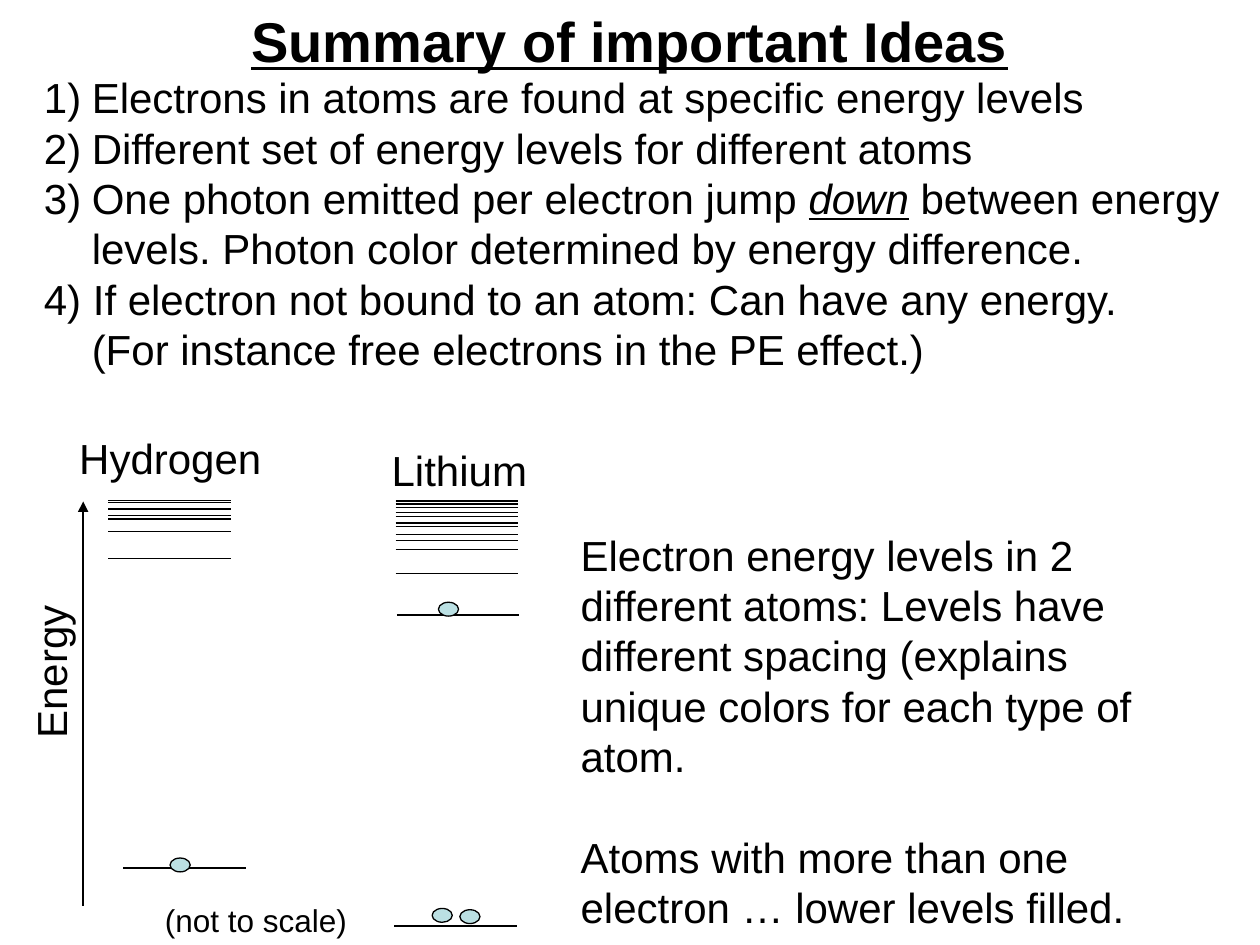
from dataclasses import dataclass

from lxml import etree
from pptx import Presentation
from pptx import util as u
from pptx.dml.color import RGBColor
from pptx.enum import shapes, text
from pptx.oxml import ns

Inches = u.Inches


@dataclass(frozen=True)
class Theme:
    font: str = "Arial"
    ink: RGBColor = RGBColor(0x00, 0x00, 0x00)
    electron: RGBColor = RGBColor(0xBB, 0xE0, 0xE3)
    title: int = 32
    body: int = 24
    note: int = 18
    line: float = 0.75


THEME = Theme()
LEVEL_WIDTH = 0.97

HYDROGEN_LEVELS = [(0.98, 6.89)] + [
    (0.86, y) for y in (4.43, 4.22, 4.12, 4.09, 4.04, 3.99, 3.97)
]
LITHIUM_LEVELS = [(3.13, 7.35), (3.15, 4.88)] + [
    (3.14, y)
    for y in (4.55, 4.36, 4.29, 4.24, 4.18, 4.15, 4.10, 4.07, 4.03, 4.00, 3.98, 3.97)
]
ELECTRONS = [(1.35, 6.81), (3.43, 7.21), (3.65, 7.22), (3.48, 4.78)]

IDEAS = [
    "Electrons in atoms are found at specific energy levels",
    "Different set of energy levels for different atoms",
    [
        ("One photon emitted per electron jump ", False),
        ("down", True),
        (" between energy levels. Photon color determined by energy difference.", False),
    ],
    "4) If electron not bound to an atom: Can have any energy.",
    "(For instance free electrons in the PE effect.)",
]
EXPLANATION = [
    "Electron energy levels in 2 different atoms: Levels have different spacing "
    "(explains unique colors for each type of atom.",
    "Atoms with more than one electron … lower levels filled.",
]


def add_text(s, box, paragraphs, size=THEME.body, heading=False, wrap=True, rotation=0, gap=0):
    sp = s.shapes.add_textbox(*map(Inches, box))
    sp.rotation = rotation
    tf = sp.text_frame
    tf.word_wrap = wrap
    tf.auto_size = text.MSO_AUTO_SIZE.SHAPE_TO_FIT_TEXT
    for i, runs in enumerate(paragraphs):
        p = tf.add_paragraph() if i else tf.paragraphs[0]
        if heading:
            p.alignment = text.PP_ALIGN.CENTER
        if i and gap:
            p.space_before = u.Pt(gap)
        for words, stressed in [(runs, False)] if isinstance(runs, str) else runs:
            r = p.add_run()
            r.text = words
            r.font.name = THEME.font
            r.font.size = u.Pt(size)
            r.font.color.rgb = THEME.ink
            r.font.bold = heading
            r.font.italic = stressed
            r.font.underline = heading or stressed
    return sp


def indent(p, first, numbered=False):
    pPr = p._p.get_or_add_pPr()
    pPr.set("marL", str(Inches(0.38)))
    pPr.set("indent", str(Inches(first)))
    if numbered:
        etree.SubElement(pPr, ns.qn("a:buFont"), typeface=THEME.font)
        etree.SubElement(pPr, ns.qn("a:buAutoNum"), type="arabicParenR")


def add_ideas(s):
    sp = add_text(s, (0.25, 0.52, 9.75, 2.52), IDEAS)
    *numbered, fourth, aside = sp.text_frame.paragraphs
    for p in numbered:
        indent(p, -0.38, numbered=True)
    indent(fourth, -0.38)
    indent(aside, 0)


def add_line(s, x1, y1, x2, y2, arrow=False):
    line = s.shapes.add_connector(
        shapes.MSO_CONNECTOR.STRAIGHT, *map(Inches, (x1, y1, x2, y2))
    )
    line.line.color.rgb = THEME.ink
    line.line.width = u.Pt(THEME.line)
    if arrow:
        etree.SubElement(line.line._get_or_add_ln(), ns.qn("a:tailEnd"), type="triangle")
    etree.SubElement(line._element.spPr, ns.qn("a:effectLst"))


def add_electron(s, x, y):
    sp = s.shapes.add_shape(
        shapes.MSO_SHAPE.OVAL, *map(Inches, (x, y, 0.16, 0.11))
    )
    sp.shadow.inherit = False
    sp.fill.solid()
    sp.fill.fore_color.rgb = THEME.electron
    sp.line.color.rgb = THEME.ink
    sp.line.width = u.Pt(THEME.line)


def main():
    prs = Presentation()
    prs.slide_width, prs.slide_height = Inches(10), Inches(7.5)
    s = prs.slides.add_slide(prs.slide_layouts[6])

    add_text(s, (0, 0, 10, 0.63), ["Summary of important Ideas"], THEME.title, heading=True)
    for x, y in HYDROGEN_LEVELS + LITHIUM_LEVELS:
        add_line(s, x, y, x + LEVEL_WIDTH, y)
    for x, y in ELECTRONS:
        add_electron(s, x, y)
    add_line(s, 0.66, 7.19, 0.66, 3.98, arrow=True)

    add_text(s, (0.53, 3.38, 1.65, 0.5), ["Hydrogen"], wrap=False)
    add_text(s, (3.01, 3.48, 1.28, 0.5), ["Lithium"], wrap=False)
    add_text(s, (-0.23, 5.08, 1.26, 0.5), ["Energy"], wrap=False, rotation=270)
    add_text(s, (1.21, 7.1, 1.65, 0.4), ["(not to scale)"], THEME.note, wrap=False)
    add_text(s, (4.51, 4.15, 4.98, 3.3), EXPLANATION, gap=THEME.body * 1.2)
    add_ideas(s)
    prs.save("out.pptx")


if __name__ == "__main__":
    main()
